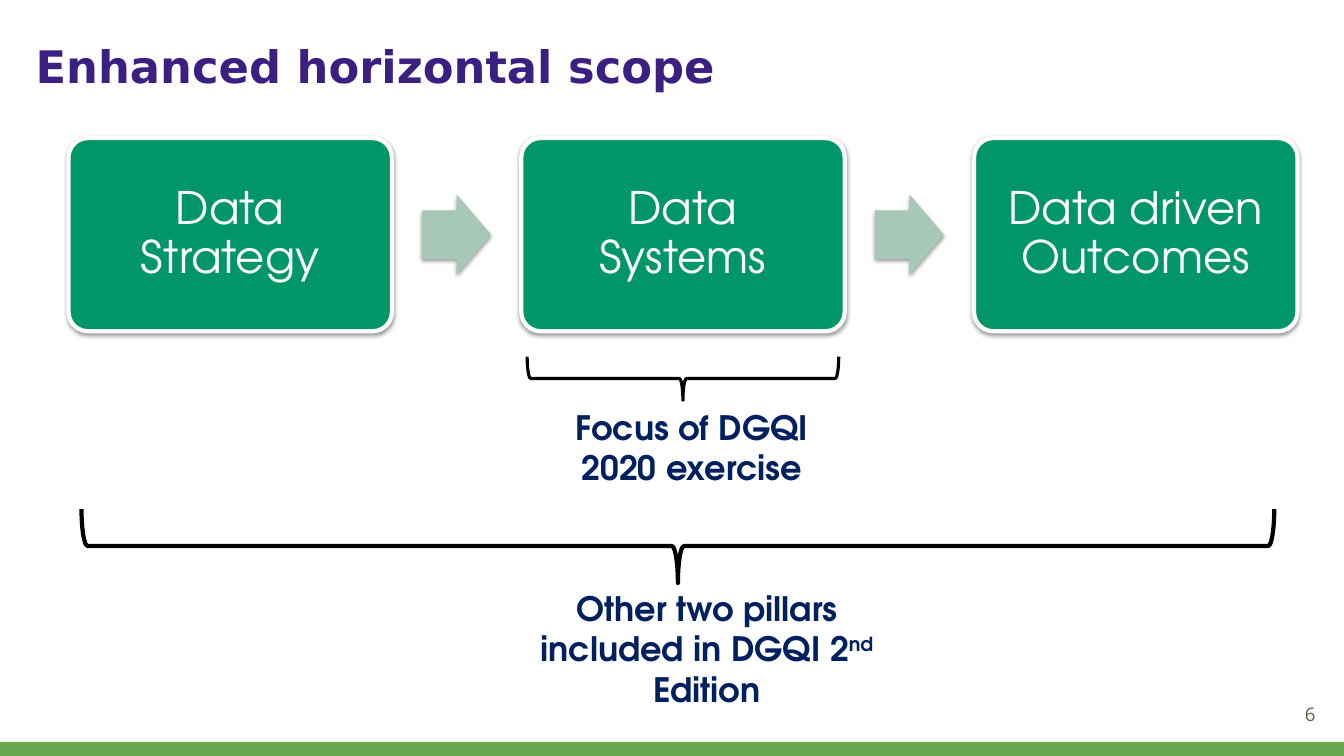
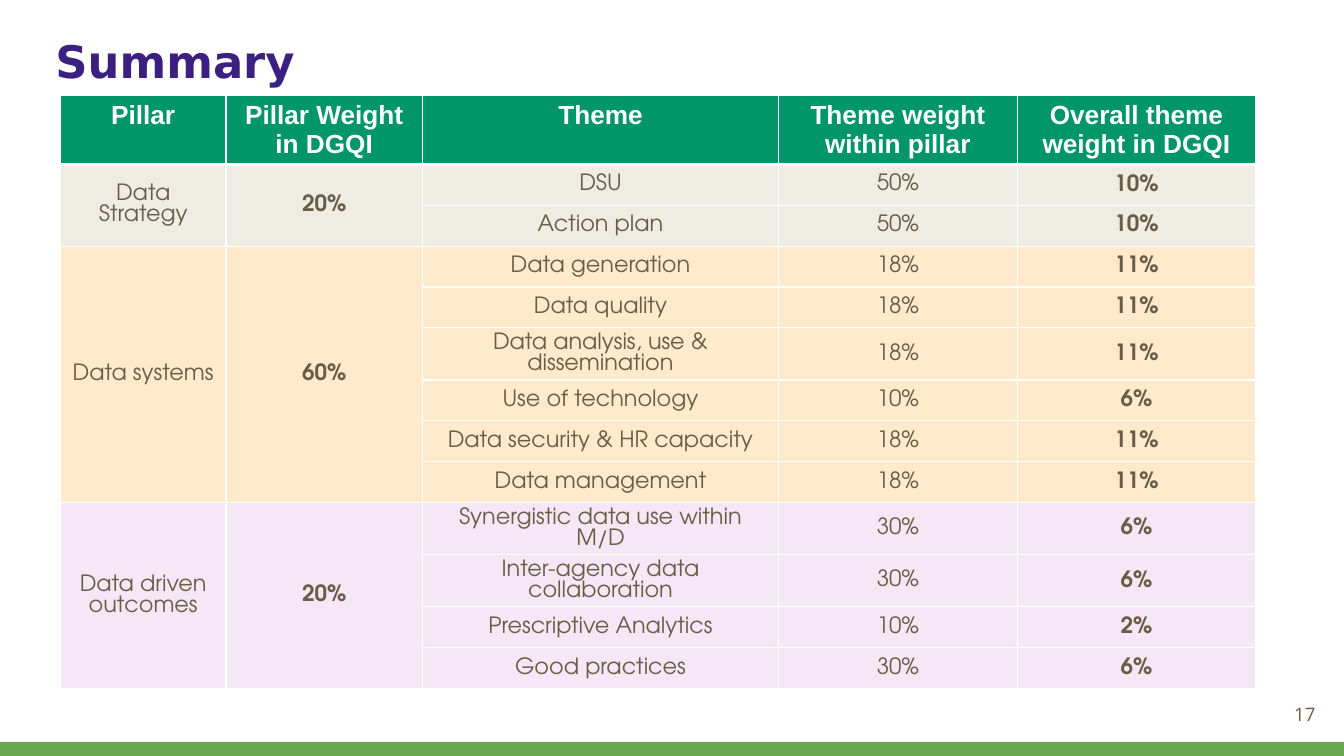
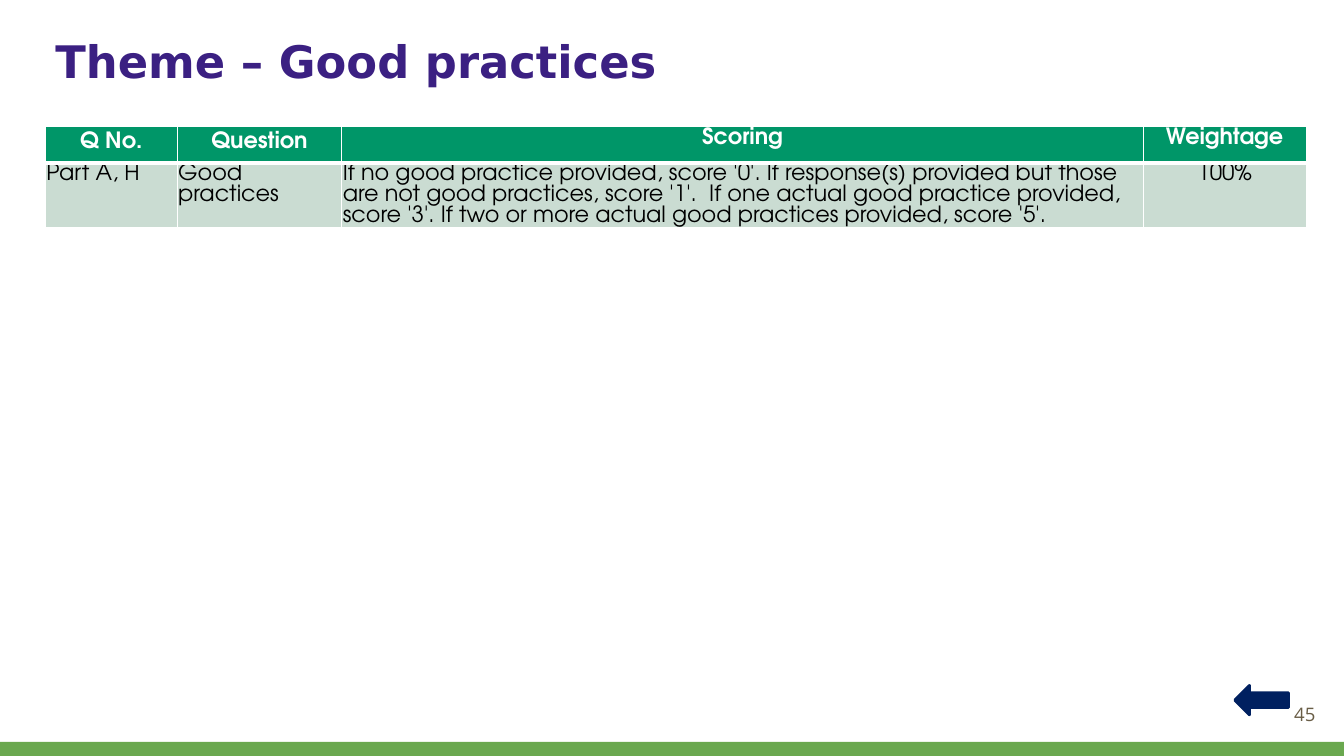
from dataclasses import dataclass
from typing import Any, NamedTuple

from lxml.etree import SubElement as Sub
from pptx import Presentation
from pptx.dml.color import RGBColor as Rgb
from pptx.enum.shapes import MSO_SHAPE as Kind
from pptx.enum.text import MSO_ANCHOR as Anchor, MSO_AUTO_SIZE as Fit, PP_ALIGN as Align
from pptx.oxml.ns import qn
from pptx.util import Emu, Pt

# Grid of square cells that covers the slide
COLS, ROWS = 160, 90
CELL = 76200


@dataclass(frozen=True)
class Theme:
    # Colours
    green: str = "009668"
    pale: str = "A8C8B7"
    mist: str = "CADCD2"
    band: str = "6AA84F"
    title: str = "3B2082"
    navy: str = "002060"
    brown: str = "695D46"
    white: str = "FFFFFF"
    black: str = "000000"
    sand: str = "EFECE4"
    peach: str = "FFEACC"
    lilac: str = "F4E8F7"
    # Fonts
    head: str = "DejaVu Sans"
    body: str = "TeX Gyre Adventor"
    plain: str = "Arial"
    folio: str = "Open Sans"
    # Type sizes and line pitch, in points
    big: float = 32
    mid: float = 24
    label: float = 18.7
    small: float = 16
    tiny: float = 13.3
    pitch: Any = Pt(15)
    # Insets in grid cells: sides, top and bottom
    wide: tuple = (1.6, 1.6)
    even: tuple = (1.2, 1.2)
    slim: tuple = (1.2, 0.6)
    tight: tuple = (0.12, 0.06)


T = Theme()


class Box(NamedTuple):
    x: float
    y: float
    w: float
    h: float


class Brace(NamedTuple):
    x: float  # centre
    y: float
    span: float
    depth: float
    line: float
    text: str
    label: Box


class Pillar(NamedTuple):
    name: str
    weight: str
    tint: str
    themes: list[tuple[str, str, str]]


def size(cells: float) -> Emu:
    return Emu(round(cells * CELL))


def frame(box: Box) -> tuple[Emu, ...]:
    return tuple(size(v) for v in box)


def put(host: Any, text: str, *, pt: float = T.small, font: str = T.body,
        color: str = T.black, bold: bool = False, align: Any = Align.LEFT,
        anchor: Any = Anchor.TOP, inset: tuple = T.slim, line: Any = 1.0) -> None:
    """Fill a text frame or table cell; parts between ^ marks are raised."""
    host.margin_left = host.margin_right = size(inset[0])
    host.margin_top = host.margin_bottom = size(inset[1])
    host.vertical_anchor = anchor
    body = getattr(host, "text_frame", host)
    body.word_wrap, body.auto_size = True, Fit.NONE
    para = body.paragraphs[0]
    para.alignment, para.line_spacing = align, line
    for i, part in enumerate(text.split("^")):
        run = para.add_run()
        run.text = part
        run.font.size, run.font.name, run.font.bold = Pt(pt), font, bold
        run.font.color.rgb = Rgb.from_string(color)
        if i % 2:
            run.font._element.set("baseline", "30000")


def note(slide: Any, box: Box, text: str, **style: Any) -> None:
    put(slide.shapes.add_textbox(*frame(box)).text_frame, text, **style)


def draw(slide: Any, kind: Any, box: Box, *, fill: str = "", line: str = "",
         width: float = 1, adj: tuple = (), shade: bool = False) -> Any:
    shape = slide.shapes.add_shape(kind, *frame(box))
    for i, value in enumerate(adj):
        shape.adjustments[i] = value
    for ink, color in ((shape.fill, fill), (shape.line.fill, line)):
        if color:
            ink.solid()
            ink.fore_color.rgb = Rgb.from_string(color)
        else:
            ink.background()
    if line:
        shape.line.width = Pt(width)
    shape.shadow.inherit = False
    if shade:
        soft = Sub(shape.element.spPr.find(qn("a:effectLst")), qn("a:outerShdw"),
                   blurRad=str(Pt(3.1)), dist=str(Pt(1.6)), dir="5400000",
                   rotWithShape="0")
        Sub(Sub(soft, qn("a:srgbClr"), val=T.black), qn("a:alpha"), val="38000")
    return shape


def edge(cell: Any, top: float = 1, base: float = 1) -> None:
    """White rules round a cell, widths in points."""
    props = cell._tc.get_or_add_tcPr()
    for side, width in (("L", 1), ("R", 1), ("T", top), ("B", base)):
        rule = Sub(props, qn(f"a:ln{side}"), w=str(Pt(width)))
        Sub(Sub(rule, qn("a:solidFill")), qn("a:srgbClr"), val=T.white)


def grid(slide: Any, x: float, y: float, cols: list, rows: list, tints: list) -> Any:
    """Table with one fill per row and a heavy rule under the header."""
    box = Box(x, y, sum(cols), sum(rows))
    table = slide.shapes.add_table(len(rows), len(cols), *frame(box)).table
    table.first_row = table.horz_banding = False
    for col, width in zip(table.columns, cols):
        col.width = size(width)
    for i, (row, height) in enumerate(zip(table.rows, rows)):
        row.height = size(height)
        for cell in row.cells:
            edge(cell, top=3 if i == 1 else 1, base=1 if i else 3)
            cell.fill.solid()
            cell.fill.fore_color.rgb = Rgb.from_string(tints[i])
    return table


TITLE = Box(5.4, 2.76, 149, 12.4)


def start(deck: Any, title: str, folio: int, box: Box = TITLE, **style: Any) -> Any:
    """New slide with its title and number."""
    slide = deck.slides.add_slide(deck.slide_layouts[5])
    head = slide.shapes.title
    head.left, head.top, head.width, head.height = frame(box)
    look = dict(pt=T.big, font=T.head, color=T.title, bold=True, inset=T.even)
    put(head.text_frame, title, **(look | style))
    note(slide, Box(148.2, 81.6, 9.6, 6.84), str(folio), pt=T.tiny, font=T.folio,
         color=T.brown, align=Align.RIGHT, anchor=Anchor.MIDDLE, inset=T.even)
    return slide


def stripe(deck: Any, slide: Any) -> None:
    """Draw the foot band and move it to the master."""
    band = draw(slide, Kind.RECTANGLE, Box(0, 88.32, COLS, 1.68), fill=T.band)
    band.element.nvSpPr.cNvPr.id = 90
    deck.slide_master.shapes.element.append(band.element)


STEPS = ["Data Strategy", "Data Systems", "Data driven Outcomes"]
BRACES = [
    Brace(81.3, 45.06, 37.1, 5.2, 2.25, "Focus of DGQI 2020 exercise",
          Box(64.9, 47.8, 34.9, 10.9)),
    Brace(80.7, 65, 142, 8.8, 3, "Other two pillars included in DGQI 2^nd^ Edition",
          Box(59.8, 69.4, 48.7, 15.7)),
]


def scope(deck: Any) -> None:
    slide = start(deck, "Enhanced horizontal scope", 6, Box(2.64, -0.24, 149, 12.4),
                  inset=T.wide, line=1.5)
    stripe(deck, slide)
    # Steps with arrows between them
    first, pitch = Box(8.16, 16.44, 38.5, 23), 53.9
    wide, high = 8.2, 9.6
    for i, text in enumerate(STEPS):
        step = first._replace(x=first.x + i * pitch)
        if i:
            mid = step.x - (pitch - step.w) / 2
            arrow = Box(mid - wide / 2, step.y + (step.h - high) / 2, wide, high)
            draw(slide, Kind.RIGHT_ARROW, arrow, fill=T.pale, adj=(0.6, 0.5), shade=True)
        card = draw(slide, Kind.ROUNDED_RECTANGLE, step, fill=T.green, line=T.white,
                    width=3, adj=(0.1,), shade=True)
        put(card.text_frame, text, pt=T.big, color=T.white, align=Align.CENTER,
            anchor=Anchor.MIDDLE, inset=T.wide, line=0.9)
    # Braces, turned to point down, with labels
    for b in BRACES:
        box = Box(b.x - b.depth / 2, b.y - b.span / 2, b.depth, b.span)
        brace = draw(slide, Kind.RIGHT_BRACE, box, line=T.black, width=b.line,
                     adj=(0.083, 0.5))
        brace.rotation = 90
        note(slide, b.label, b.text, pt=T.mid, color=T.navy, bold=True,
             align=Align.CENTER)


HEADS = ["Pillar", "Pillar Weight in DGQI", "Theme", "Theme weight within pillar",
         "Overall theme weight in DGQI"]
PILLARS = [
    Pillar("Data Strategy", "20%", T.sand, [
        ("DSU", "50%", "10%"),
        ("Action plan", "50%", "10%"),
    ]),
    Pillar("Data systems", "60%", T.peach, [
        ("Data generation", "18%", "11%"),
        ("Data quality", "18%", "11%"),
        ("Data analysis, use & dissemination", "18%", "11%"),
        ("Use of technology", "10%", "6%"),
        ("Data security & HR capacity", "18%", "11%"),
        ("Data management", "18%", "11%"),
    ]),
    Pillar("Data driven outcomes", "20%", T.lilac, [
        ("Synergistic data use within M/D", "30%", "6%"),
        ("Inter-agency data collaboration", "30%", "6%"),
        ("Prescriptive Analytics", "10%", "2%"),
        ("Good practices", "30%", "6%"),
    ]),
]


def summary(deck: Any) -> None:
    slide = start(deck, "Summary", 17)
    # Themes too long for one line get a taller row
    rows, tints = [7.9], [T.green]
    for p in PILLARS:
        rows += [6.18 if len(name) > 28 else 4.87 for name, *_ in p.themes]
        tints += [p.tint] * len(p.themes)
    table = grid(slide, 7.2, 11.4, [19.7, 23.4, 42.4, 28.4, 28.4], rows, tints)
    for c, text in enumerate(HEADS):
        put(table.cell(0, c), text, pt=T.label, font=T.plain, color=T.white,
            bold=True, align=Align.CENTER)
    # Pillars span their themes; weights in DGQI are bold
    top = 1
    for p in PILLARS:
        last = top + len(p.themes) - 1
        for c in (0, 1):
            table.cell(top, c).merge(table.cell(last, c))
        for r, theme in enumerate(p.themes, top):
            texts = (p.name, p.weight, *theme)
            for c in range(0 if r == top else 2, len(texts)):
                put(table.cell(r, c), texts[c], color=T.brown, bold=c in (1, 4),
                    align=Align.CENTER, anchor=Anchor.MIDDLE, line=T.pitch)
        top = last + 1


SCORES = [
    ["Q No.", "Question", "Scoring", "Weightage"],
    ["Part A, H", "Good practices",
     "If no good practice provided, score '0'. If response(s) provided but those are "
     "not good practices, score '1'.  If one actual good practice provided, score '3'. "
     "If two or more actual good practices provided, score '5'.", "100%"],
]


def scores(deck: Any) -> None:
    slide = start(deck, "Theme – Good practices", 45)
    table = grid(slide, 5.4, 15.1, [15.7, 19.6, 95.4, 19.4], [4.35, 7.55],
                 [T.green, T.mist])
    for r, texts in enumerate(SCORES):
        head = r == 0
        for c, text in enumerate(texts):
            put(table.cell(r, c), text, color=T.white if head else T.black, bold=head,
                align=Align.CENTER if head or c == 3 else Align.LEFT,
                inset=T.slim if head and c < 2 else T.tight, line=T.pitch)
    # Back arrow
    draw(slide, Kind.LEFT_ARROW, Box(147, 81.6, 6.4, 3.5), fill=T.navy, line=T.navy,
         width=2)


def main() -> None:
    deck = Presentation()
    deck.slide_width, deck.slide_height = size(COLS), size(ROWS)
    for build in (scope, summary, scores):
        build(deck)
    deck.save("out.pptx")


if __name__ == "__main__":
    main()
